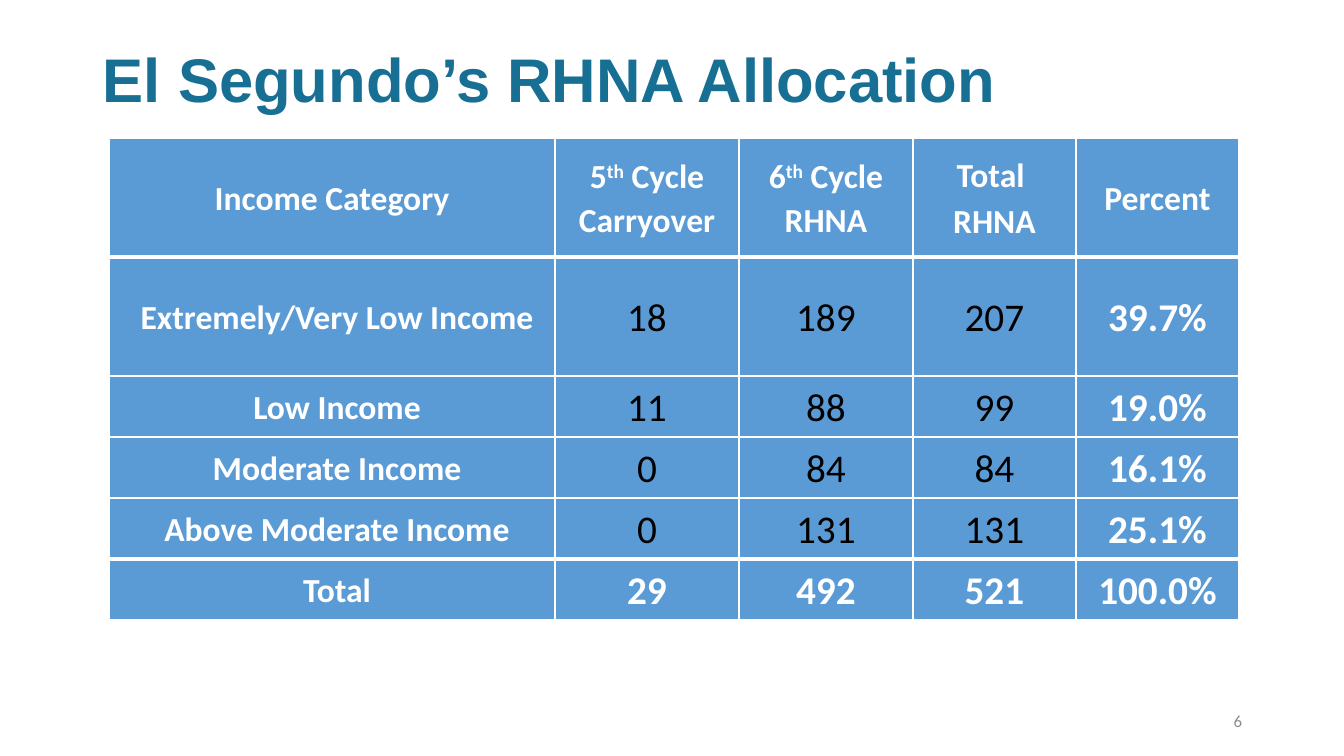
from lxml import etree
from pptx import Presentation
from pptx.dml.color import RGBColor
from pptx.enum.text import MSO_ANCHOR, PP_ALIGN
from pptx.oxml.ns import qn
from pptx.util import Emu, Pt

MIDDLE, TOP = MSO_ANCHOR.MIDDLE, MSO_ANCHOR.TOP
LEFT, CENTER, RIGHT = PP_ALIGN.LEFT, PP_ALIGN.CENTER, PP_ALIGN.RIGHT

# Content: a cell is a list of paragraphs, "^" encloses superscript text
TITLE = "El Segundo’s RHNA Allocation"
PAGE_NUMBER = "6"
HEADER = [["Income Category"], ["5^th^ Cycle Carryover"], ["6^th^ Cycle RHNA"],
          ["Total ", "RHNA"], ["Percent"]]
ALLOCATION = [
    ("Extremely/Very Low Income", "18", "189", "207", "39.7%"),
    ("Low Income", "11", "88", "99", "19.0%"),
    ("Moderate Income", "0", "84", "84", "16.1%"),
    ("Above Moderate Income", "0", "131", "131", "25.1%"),
    ("Total", "29", "492", "521", "100.0%"),
]

# Layout in px
PX = 9144000 / 1008
SLIDE = (1344, 756)
TITLE_BOX = (93, 40, 1159, 146)
PAGE_NUMBER_BOX = (950, 701, 302, 40)
TABLE_ORIGIN = (109, 138)
COLUMN_WIDTHS = [446, 184, 174, 163, 163]
ROW_HEIGHTS = [119, 119, 61, 61, 61, 61]
CATEGORY_INDENT = 10

THEME = {
    "title": RGBColor(0x18, 0x6F, 0x94), "page": RGBColor(0x8C, 0x8C, 0x8C),
    "cell": RGBColor(0x5B, 0x9B, 0xD5), "light": RGBColor(0xFF, 0xFF, 0xFF),
    "dark": RGBColor(0, 0, 0),
    "title_font": "Arial", "body_font": "Calibri",
    "title_size": 44, "label_size": 24, "figure_size": 28, "page_size": 12,
    "thin": 1, "thick": 3,
}


def px(length):
    return Emu(round(length * PX))


def set_font(paragraph, face, size, color, bold=False):
    font = paragraph.font
    font.name, font.size, font.bold = THEME[face], Pt(THEME[size]), bold
    font.color.rgb = THEME[color]


def add_line(slide, box, text, align, anchor):
    frame = slide.shapes.add_textbox(*map(px, box)).text_frame
    frame.word_wrap, frame.vertical_anchor = True, anchor
    paragraph = frame.paragraphs[0]
    paragraph.text, paragraph.alignment = text, align
    return frame, paragraph


def add_border(cell, side, width):
    properties = cell._tc.get_or_add_tcPr()
    line = etree.SubElement(properties, qn(f"a:ln{side}"), w=str(Pt(width)))
    fill = etree.SubElement(line, qn("a:solidFill"))
    etree.SubElement(fill, qn("a:srgbClr"), val=str(THEME["light"]))


def fill_cell(cell, lines, size, color, bold, indent):
    cell.margin_left = cell.margin_right = cell.margin_top = cell.margin_bottom = 0
    cell.vertical_anchor = MIDDLE
    frame = cell.text_frame
    for index, line in enumerate(lines):
        paragraph = frame.add_paragraph() if index else frame.paragraphs[0]
        paragraph.alignment, paragraph.line_spacing = CENTER, 1.07
        if index:
            paragraph.space_before = Pt(1.8)
        if indent:
            paragraph._p.get_or_add_pPr().set("marL", str(px(indent)))
        for part, text in enumerate(line.split("^")):
            run = paragraph.add_run()
            run.text = text
            if part % 2:
                run._r.get_or_add_rPr().set("baseline", "30000")
        set_font(paragraph, "body_font", size, color, bold)


def add_allocation_table(slide):
    rows = [HEADER] + [[[text] for text in row] for row in ALLOCATION]
    last_row, last_column = len(rows) - 1, len(HEADER) - 1
    table = slide.shapes.add_table(
        len(rows), len(HEADER), *map(px, TABLE_ORIGIN),
        px(sum(COLUMN_WIDTHS)), px(sum(ROW_HEIGHTS))).table
    for column, width in zip(table.columns, COLUMN_WIDTHS):
        column.width = px(width)
    for row, height in zip(table.rows, ROW_HEIGHTS):
        row.height = px(height)

    thick_edges = {1, last_row}  # below the header and above the total
    for r, row in enumerate(rows):
        for c, lines in enumerate(row):
            cell = table.cell(r, c)
            is_label = r == 0 or c == 0
            is_plain = 0 < r < last_row and 0 < c < last_column
            fill_cell(cell, lines, "label_size" if is_label else "figure_size",
                      "dark" if is_plain else "light", not is_plain,
                      CATEGORY_INDENT if r and c == 0 else 0)
            # Borders come before the fill in the cell properties
            for side, edge in (("L", None), ("R", None), ("T", r), ("B", r + 1)):
                add_border(cell, side, THEME["thick" if edge in thick_edges else "thin"])
            cell.fill.solid()
            cell.fill.fore_color.rgb = THEME["cell"]


def main():
    deck = Presentation()
    deck.slide_width, deck.slide_height = map(px, SLIDE)
    slide = deck.slides.add_slide(deck.slide_layouts[6])

    # Title
    frame, title = add_line(slide, TITLE_BOX, TITLE, LEFT, TOP)
    frame.margin_top = px(9)
    title.line_spacing = 0.9
    set_font(title, "title_font", "title_size", "title", True)

    # Page number
    _, number = add_line(slide, PAGE_NUMBER_BOX, PAGE_NUMBER, RIGHT, MIDDLE)
    set_font(number, "body_font", "page_size", "page")

    add_allocation_table(slide)
    deck.save("out.pptx")


if __name__ == "__main__":
    main()
